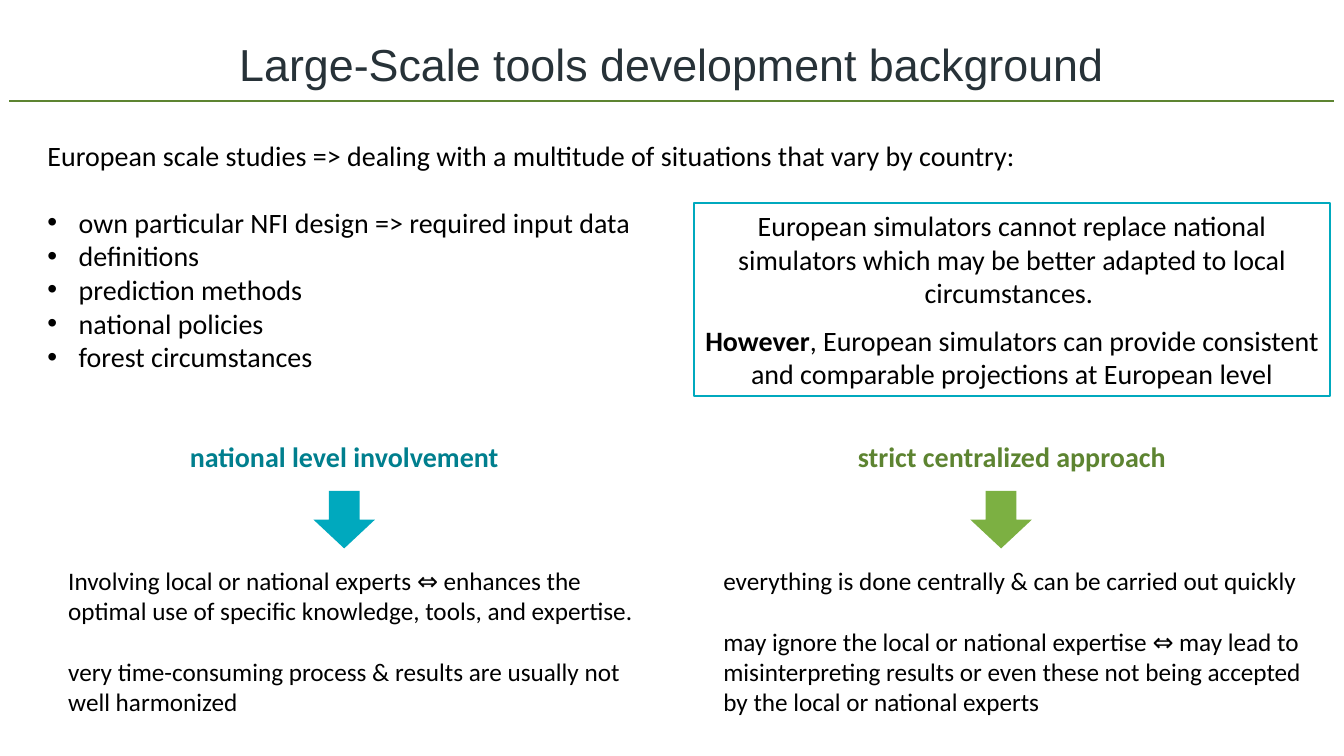
import pptx
import pptx.util
import pptx.dml.color
import pptx.enum.shapes
import pptx.enum.text
import pptx.oxml.ns
import lxml.etree

Cm = pptx.util.Cm
Pt = pptx.util.Pt
RGBColor = pptx.dml.color.RGBColor
PP_ALIGN = pptx.enum.text.PP_ALIGN
ANCHOR = pptx.enum.text.MSO_ANCHOR
SHAPE = pptx.enum.shapes.MSO_SHAPE

BLACK = RGBColor(0x00, 0x00, 0x00)
SLATE = RGBColor(0x27, 0x32, 0x38)
TEAL = RGBColor(0x00, 0xA9, 0xBE)
DARK_TEAL = RGBColor(0x00, 0x7F, 0x8E)
GREEN = RGBColor(0x7C, 0xB0, 0x42)
DARK_GREEN = RGBColor(0x5D, 0x84, 0x31)

TITLE_FONT = {"name": "Arial", "size": Pt(32), "bold": False}
BODY_FONT = {"name": "Calibri", "size": Pt(20), "bold": False}
HEADING_FONT = {"name": "Calibri", "size": Pt(20), "bold": True}
DETAIL_FONT = {"name": "Calibri", "size": Pt(18), "bold": False}
FRAME = {"word_wrap": True, "auto_size": pptx.enum.text.MSO_AUTO_SIZE.NONE}


def set_attributes(target, values):
    """Set every attribute named in a dict of format values."""
    for attribute, value in values.items():
        setattr(target, attribute, value)


def place(holder, box):
    """Move a placeholder to a box given in centimetres."""
    sides = ("left", "top", "width", "height")
    set_attributes(holder, dict(zip(sides, map(Cm, box))))


def write(frame, paragraphs, font, color, align, gap=0, anchor=ANCHOR.TOP):
    """Write paragraphs of (wording, bold) runs or plain strings, gap points apart."""
    set_attributes(frame, {**FRAME, "vertical_anchor": anchor})
    for index, runs in enumerate(paragraphs):
        paragraph = frame.add_paragraph() if index else frame.paragraphs[0]
        spacing = {"alignment": align, "space_before": Pt(gap if index else 0)}
        set_attributes(paragraph, spacing)
        for wording, bold in [(runs, font["bold"])] if isinstance(runs, str) else runs:
            run = paragraph.add_run()
            run.text = wording
            set_attributes(run.font, {**font, "bold": bold})
            run.font.color.rgb = color


def set_bullet(paragraph, indent, mark):
    """Give a paragraph a hanging indent and bullet, or neither when mark is empty."""
    properties = paragraph._p.get_or_add_pPr()
    properties.set("marL", str(indent))
    properties.set("indent", str(-indent))
    qn = pptx.oxml.ns.qn
    if mark:
        lxml.etree.SubElement(properties, qn("a:buFont")).set("typeface", "Arial")
        lxml.etree.SubElement(properties, qn("a:buChar")).set("char", mark)
    else:
        lxml.etree.SubElement(properties, qn("a:buNone"))


def add_heading(slide, box, wording):
    """Fill the title placeholder and rule a line across the slide under it."""
    left, top, width, height = box
    place(slide.shapes.title, box)
    write(slide.shapes.title.text_frame, [wording], TITLE_FONT, SLATE,
          PP_ALIGN.CENTER, anchor=ANCHOR.MIDDLE)
    overhang, rule_top = 2.07, Cm(top + height + 0.12)
    rule = slide.shapes.add_connector(
        pptx.enum.shapes.MSO_CONNECTOR.STRAIGHT,
        Cm(left - overhang), rule_top, Cm(left + width + overhang), rule_top)
    rule.line.color.rgb = DARK_GREEN
    rule.line.width = Pt(1.5)
    lxml.etree.SubElement(rule._element.spPr, pptx.oxml.ns.qn("a:effectLst"))


def add_situations(slide, box, intro, situations):
    """Fill the body placeholder with an intro and the bulleted situations."""
    body = slide.placeholders[1]
    place(body, box)
    write(body.text_frame, [intro, *situations], BODY_FONT, BLACK, PP_ALIGN.LEFT)
    first, *rest = body.text_frame.paragraphs
    rest[0].space_before = Pt(24)
    set_bullet(first, 0, "")
    for situation in rest:
        set_bullet(situation, Cm(0.79), "•")


def add_statement(slide, box, paragraphs):
    """Draw the outlined statement box."""
    statement = slide.shapes.add_shape(SHAPE.RECTANGLE, *map(Cm, box))
    statement.shadow.inherit = False
    statement.fill.background()
    statement.line.color.rgb = TEAL
    statement.line.width = Pt(1.5)
    write(statement.text_frame, paragraphs, BODY_FONT, BLACK, PP_ALIGN.CENTER,
          gap=9.8, anchor=ANCHOR.MIDDLE)


def add_approach(slide, box, approach):
    """Stack an approach's heading, down arrow and details inside a box."""
    left, top, width, height = box
    heading = slide.shapes.add_textbox(Cm(left), Cm(top), Cm(width), Cm(1.12))
    write(heading.text_frame, [approach["heading"]], HEADING_FONT,
          approach["heading_color"], PP_ALIGN.CENTER)

    arrow_width, arrow_height = 1.55, 1.45
    arrow_left = left + (width - arrow_width) / 2 + approach["arrow_shift"]
    arrow = slide.shapes.add_shape(SHAPE.DOWN_ARROW, Cm(arrow_left), Cm(top + 1.42),
                                   Cm(arrow_width), Cm(arrow_height))
    arrow.shadow.inherit = False
    arrow.fill.solid()
    arrow.fill.fore_color.rgb = approach["arrow_color"]
    arrow.line.fill.background()

    details_top = 3.17
    details = slide.shapes.add_textbox(
        Cm(left + approach["details_inset"]), Cm(top + details_top),
        Cm(width + 0.2), Cm(height - details_top))
    write(details.text_frame, approach["details"], DETAIL_FONT, BLACK,
          PP_ALIGN.LEFT, gap=21.8)


def main():
    """Build the slide and save it."""
    deck = pptx.Presentation()
    set_attributes(deck, {"slide_width": Cm(33.87), "slide_height": Cm(19.05)})
    slide = deck.slides.add_slide(deck.slide_layouts[1])

    add_heading(slide, (2.3, 0.8, 29.26, 1.62), "Large-Scale tools development background")
    add_situations(
        slide, (0.94, 3.35, 31.55, 7),
        "European scale studies => dealing with a multitude of situations that vary by country:",
        ["own particular NFI design => required input data", "definitions",
         "prediction methods", "national policies", "forest circumstances"])
    add_statement(slide, (17.48, 5.11, 16.05, 4.88), [
        "European simulators cannot replace national simulators which may be better "
        "adapted to local circumstances. ",
        [("However", True),
         (", European simulators can provide consistent and comparable projections "
          "at European level", False)]])

    national = {
        "heading": "national level involvement", "heading_color": DARK_TEAL,
        "arrow_color": TEAL, "arrow_shift": 0, "details_inset": 0.1,
        "details": [
            "Involving local or national experts ⇔ enhances the optimal use of specific "
            "knowledge, tools, and expertise.",
            "very time-consuming process & results are usually not well harmonized"]}
    centralized = {
        "heading": "strict centralized approach", "heading_color": DARK_GREEN,
        "arrow_color": GREEN, "arrow_shift": -0.27, "details_inset": 0,
        "details": [
            "everything is done centrally & can be carried out quickly",
            "may ignore the local or national expertise ⇔ may lead to  misinterpreting "
            "results or even these not being accepted by the local or national experts"]}
    add_approach(slide, (1.37, 10.95, 14.61, 7.28), national)
    add_approach(slide, (17.98, 10.95, 15.04, 7.28), centralized)

    deck.save("out.pptx")


if __name__ == "__main__":
    main()
